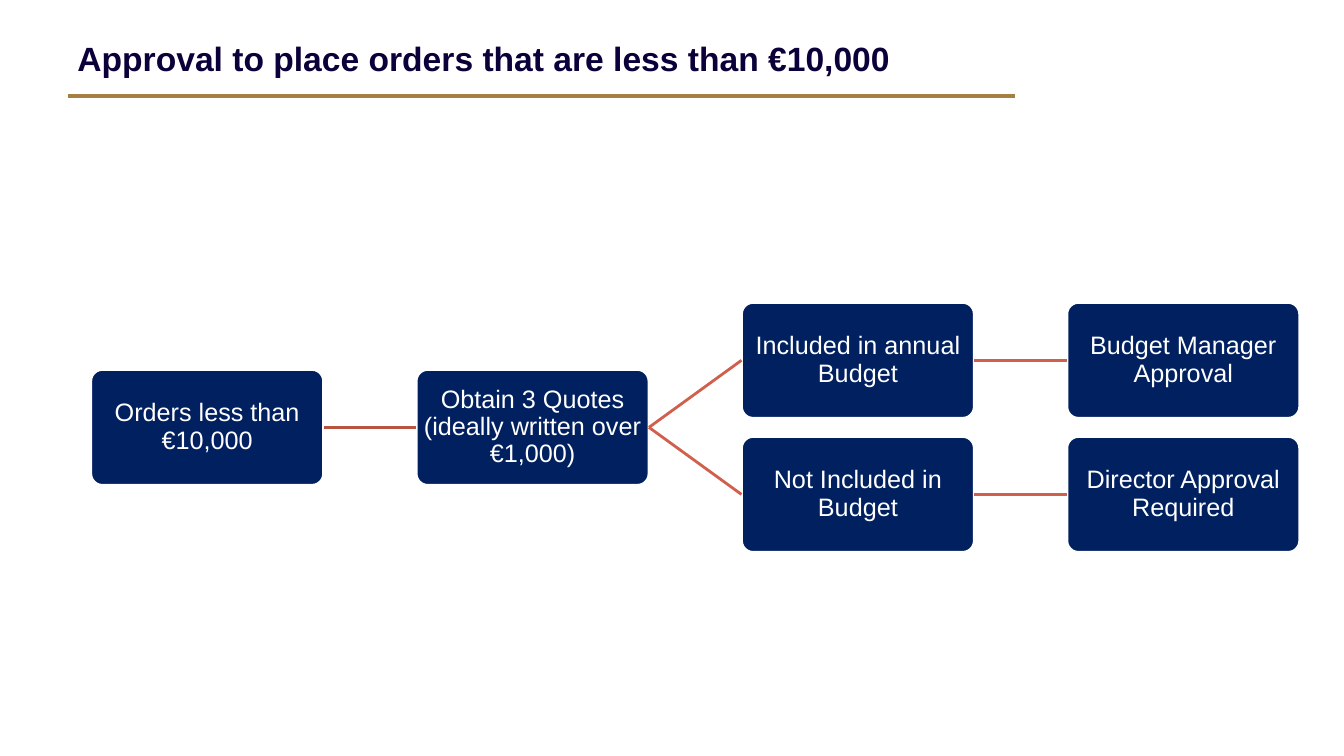
from lxml.etree import SubElement
from pptx import Presentation
from pptx.dml.color import RGBColor
from pptx.enum.shapes import MSO_CONNECTOR, MSO_SHAPE
from pptx.enum.text import MSO_ANCHOR, PP_ALIGN
from pptx.oxml.ns import qn
from pptx.util import Inches, Pt

WHITE = RGBColor(0xFF, 0xFF, 0xFF)
NAVY = RGBColor(0x00, 0x20, 0x60)
INK = RGBColor(0x0B, 0x00, 0x39)
GOLD = RGBColor(0xA6, 0x7F, 0x42)
BRICK = RGBColor(0xB7, 0x55, 0x43)
CORAL = RGBColor(0xD0, 0x60, 0x4C)

LEFT_SITE, RIGHT_SITE = 1, 3


class ApprovalSlide:
    font_name = "Arial"
    box_width, box_height = 2.31, 1.15
    first_left, column_step = 0.9, 3.227
    first_top, row_step = 3.0, 1.33

    def __init__(self, deck):
        self.page = deck.slides.add_slide(deck.slide_layouts[6])

    def style_text(self, para, size, color, bold=False):
        for span in para.runs:
            span.font.name = self.font_name
            span.font.size = Pt(size)
            span.font.bold = bold
            span.font.color.rgb = color

    def title(self, text):
        box = self.page.shapes.add_textbox(
            Inches(0.67), Inches(0.33), Inches(12), Inches(0.81))
        box.text_frame.word_wrap = True
        box.text_frame.text = text
        self.style_text(box.text_frame.paragraphs[0], 24, INK, bold=True)

    def line(self, color, width, start=(0, 0), end=(0, 0)):
        connector = self.page.shapes.add_connector(
            MSO_CONNECTOR.STRAIGHT, *map(Inches, start + end))
        connector.line.color.rgb = color
        connector.line.width = Pt(width)
        SubElement(connector._element.spPr, qn("a:effectLst"))
        return connector

    def step(self, column, row, text):
        box = self.page.shapes.add_shape(
            MSO_SHAPE.ROUNDED_RECTANGLE,
            Inches(self.first_left + column * self.column_step),
            Inches(self.first_top + row * self.row_step),
            Inches(self.box_width), Inches(self.box_height))
        box.adjustments[0] = 0.1
        box.shadow.inherit = False
        box.fill.solid()
        box.fill.fore_color.rgb = NAVY
        box.line.color.rgb = WHITE
        box.line.width = Pt(2)
        frame = box.text_frame
        frame.word_wrap = True
        frame.vertical_anchor = MSO_ANCHOR.MIDDLE
        frame.margin_left = frame.margin_right = Inches(0.01)
        frame.margin_top = frame.margin_bottom = Inches(0.01)
        frame.text = text
        para = frame.paragraphs[0]
        para.alignment = PP_ALIGN.CENTER
        para.line_spacing = 0.9
        self.style_text(para, 18, WHITE)
        return box

    def link(self, parent, child, color=CORAL):
        connector = self.line(color, 2)
        connector.begin_connect(parent, RIGHT_SITE)
        connector.end_connect(child, LEFT_SITE)


def main():
    deck = Presentation()
    deck.slide_width, deck.slide_height = Inches(13.33), Inches(7.5)
    slide = ApprovalSlide(deck)

    # Heading and rule
    slide.line(GOLD, 2.75, (0.67, 0.95), (10.07, 0.95))
    slide.title("Approval to place orders that are less than €10,000")

    # Shared start of the flow, centred between the two branches
    orders = slide.step(0, 0.5, "Orders less than €10,000")
    quotes = slide.step(1, 0.5, "Obtain 3 Quotes (ideally written over €1,000)")
    slide.link(orders, quotes, BRICK)

    # One branch per budget case
    branches = [
        ("Included in annual Budget", "Budget Manager Approval"),
        ("Not Included in Budget", "Director Approval Required"),
    ]
    for row, (case, approval) in enumerate(branches):
        case_box = slide.step(2, row, case)
        approval_box = slide.step(3, row, approval)
        slide.link(quotes, case_box)
        slide.link(case_box, approval_box)

    deck.save("out.pptx")


if __name__ == "__main__":
    main()
